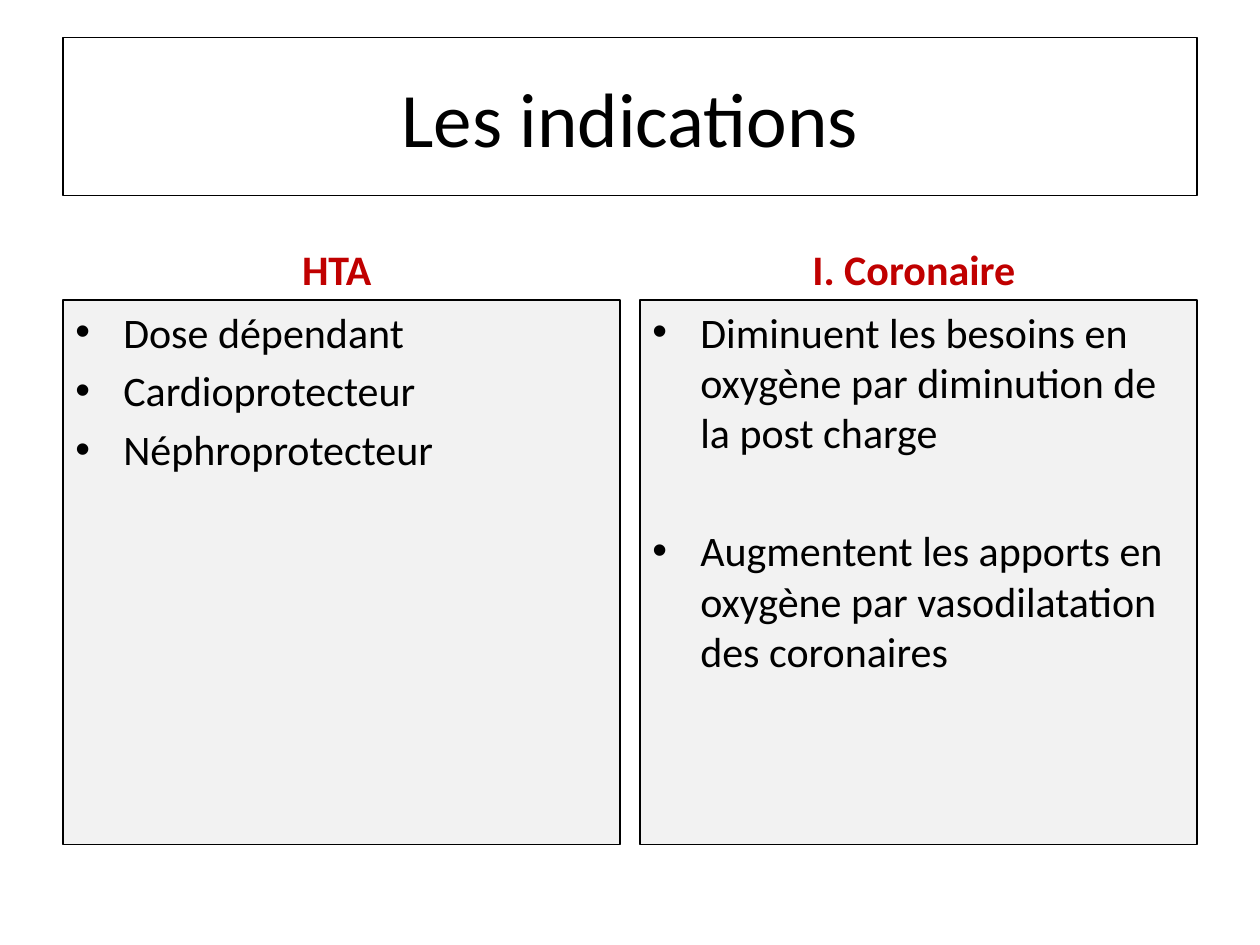
from dataclasses import dataclass

from lxml import etree
from pptx import Presentation
from pptx.dml.color import RGBColor
from pptx.enum import shapes, text
from pptx.oxml import ns
from pptx.util import Inches, Pt

COLORS = {"ink": "000000", "heading": "C00000", "panel": "F2F2F2"}
FONT = "Calibri"
MARGIN, COLUMN_WIDTH, COLUMN_STEP = 0.5, 4.42, 4.58
HEADING_TOP, HEADING_HEIGHT, PANEL_HEIGHT = 1.68, 0.7, 4.32
BULLET_INDENT = 0.38
ITEM_GAP, WIDE_GAP = 4.8, 38.5


@dataclass
class Indication:
    heading: str
    effects: list[str]
    gap: float


INDICATIONS = [
    Indication("HTA ", ["Dose dépendant", "Cardioprotecteur", "Néphroprotecteur"], ITEM_GAP),
    Indication(
        "I. Coronaire ",
        [
            "Diminuent les besoins en oxygène par diminution de la post charge",
            "Augmentent les apports en oxygène par vasodilatation des coronaires",
        ],
        WIDE_GAP,
    ),
]


def color(key: str) -> RGBColor:
    """Return the named palette colour."""
    return RGBColor.from_string(COLORS[key])


def add_words(paragraph, words: str, size: float, ink: str = "ink", bold: bool = False) -> None:
    """Add one formatted run to a paragraph."""
    run = paragraph.add_run()
    run.text = words
    run.font.name = FONT
    run.font.size = Pt(size)
    run.font.bold = bold
    run.font.color.rgb = color(ink)


def add_frame(slide, left: float, top: float, width: float, height: float, fill: str | None = None):
    """Draw a thin outlined rectangle and return its text frame."""
    frame = slide.shapes.add_shape(
        shapes.MSO_SHAPE.RECTANGLE, Inches(left), Inches(top), Inches(width), Inches(height)
    )
    frame.shadow.inherit = False
    frame.line.color.rgb = color("ink")
    frame.line.width = Pt(0.75)
    if fill:
        frame.fill.solid()
        frame.fill.fore_color.rgb = color(fill)
    else:
        frame.fill.background()
    frame.text_frame.word_wrap = True
    return frame.text_frame


def add_bullet(paragraph) -> None:
    """Give a paragraph a hanging bullet."""
    properties = paragraph._p.get_or_add_pPr()
    properties.set("marL", str(Inches(BULLET_INDENT)))
    properties.set("indent", str(-Inches(BULLET_INDENT)))
    etree.SubElement(properties, ns.qn("a:buFont"), typeface="Arial")
    etree.SubElement(properties, ns.qn("a:buChar"), char="•")


def add_title(slide, words: str) -> None:
    """Draw the framed title."""
    title = add_frame(slide, MARGIN, 0.3, 9, 1.25)
    title.vertical_anchor = text.MSO_ANCHOR.MIDDLE
    title.paragraphs[0].alignment = text.PP_ALIGN.CENTER
    add_words(title.paragraphs[0], words, 44)


def add_indication(slide, left: float, indication: Indication) -> None:
    """Draw a heading above its panel of effects."""
    heading = slide.shapes.add_textbox(
        Inches(left), Inches(HEADING_TOP), Inches(COLUMN_WIDTH), Inches(HEADING_HEIGHT)
    ).text_frame
    heading.word_wrap = True
    heading.vertical_anchor = text.MSO_ANCHOR.BOTTOM
    heading.paragraphs[0].alignment = text.PP_ALIGN.CENTER
    heading.paragraphs[0].space_before = Pt(ITEM_GAP)
    add_words(heading.paragraphs[0], indication.heading, 24, "heading", True)

    panel = add_frame(
        slide, left, HEADING_TOP + HEADING_HEIGHT, COLUMN_WIDTH, PANEL_HEIGHT, "panel"
    )
    panel.vertical_anchor = text.MSO_ANCHOR.TOP
    for index, effect in enumerate(indication.effects):
        paragraph = panel.add_paragraph() if index else panel.paragraphs[0]
        paragraph.alignment = text.PP_ALIGN.LEFT
        paragraph.space_before = Pt(indication.gap if index else ITEM_GAP)
        add_bullet(paragraph)
        add_words(paragraph, effect, 24)


def main() -> None:
    """Build and save the slide."""
    deck = Presentation()
    deck.slide_width, deck.slide_height = Inches(10), Inches(7.5)
    slide = deck.slides.add_slide(deck.slide_layouts[6])
    add_title(slide, "Les indications")
    for column, indication in enumerate(INDICATIONS):
        add_indication(slide, MARGIN + column * COLUMN_STEP, indication)
    deck.save("out.pptx")


if __name__ == "__main__":
    main()
